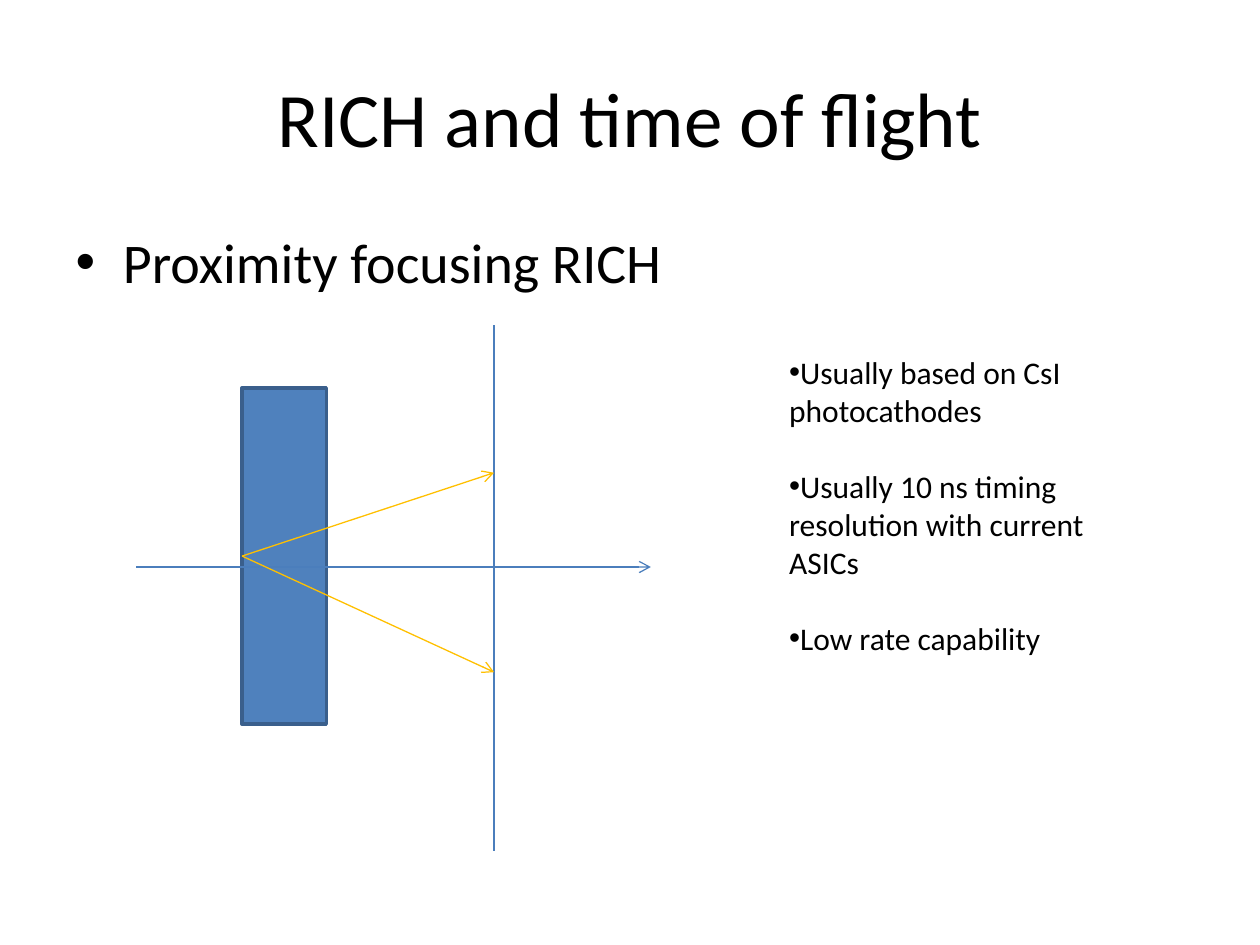
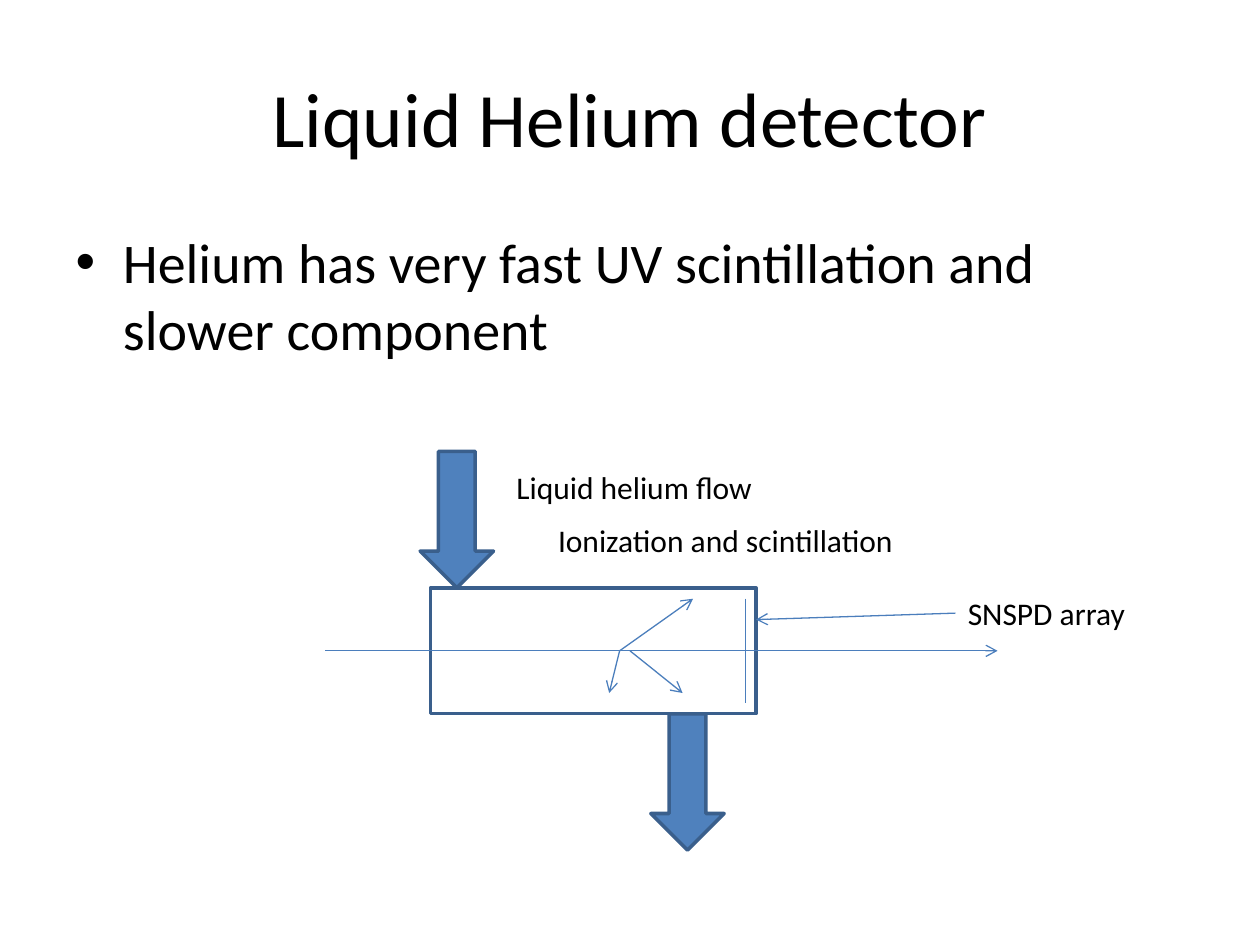
from dataclasses import dataclass

from pptx import Presentation
from pptx.dml.color import RGBColor
from pptx.enum.shapes import MSO_CONNECTOR, MSO_SHAPE
from pptx.enum.text import MSO_AUTO_SIZE, PP_ALIGN
from pptx.oxml.ns import qn
from pptx.util import Cm, Pt
from lxml.etree import SubElement


@dataclass(frozen=True)
class Theme:
    font: str = "Calibri"
    text: RGBColor = RGBColor(0x00, 0x00, 0x00)
    fill: RGBColor = RGBColor(0x4F, 0x81, 0xBD)
    outline: RGBColor = RGBColor(0x3A, 0x5F, 0x8C)
    line: RGBColor = RGBColor(0x4B, 0x7E, 0xBC)
    photon: RGBColor = RGBColor(0xFF, 0xC0, 0x00)
    title_size: Pt = Pt(44)
    body_size: Pt = Pt(32)
    label_size: Pt = Pt(18)
    note_gap: Pt = Pt(22)
    outline_width: Pt = Pt(2)
    line_width: Pt = Pt(0.75)


THEME = Theme()
LEFT_SIDE = 1


def format_runs(tf, size):
    for p in tf.paragraphs:
        for r in p.runs:
            r.font.name = THEME.font
            r.font.size = size
            r.font.color.rgb = THEME.text


def place(sp, left, top, width, height):
    sp.left, sp.top, sp.width, sp.height = Cm(left), Cm(top), Cm(width), Cm(height)


def add_content_slide(prs, title, bullet):
    slide = prs.slides.add_slide(prs.slide_layouts[1])
    title_sp, body_sp = slide.placeholders
    place(title_sp, 1.27, 0.76, 22.86, 3.18)
    place(body_sp, 1.27, 4.45, 22.86, 12.57)
    title_sp.text_frame.text = title
    title_sp.text_frame.paragraphs[0].alignment = PP_ALIGN.CENTER
    body_sp.text_frame.text = bullet
    format_runs(title_sp.text_frame, THEME.title_size)
    format_runs(body_sp.text_frame, THEME.body_size)
    return slide


def add_block(slide, kind, left, top, width, height, filled=True):
    sp = slide.shapes.add_shape(kind, Cm(left), Cm(top), Cm(width), Cm(height))
    sp.shadow.inherit = False
    if filled:
        sp.fill.solid()
        sp.fill.fore_color.rgb = THEME.fill
    else:
        sp.fill.background()
    sp.line.color.rgb = THEME.outline
    sp.line.width = THEME.outline_width
    return sp


def add_line(slide, start, end, color=THEME.line, arrow=True):
    """Draw a thin line between two (x, y) points in cm."""
    line = slide.shapes.add_connector(
        MSO_CONNECTOR.STRAIGHT, *(Cm(v) for v in (*start, *end)))
    line.line.color.rgb = color
    line.line.width = THEME.line_width
    sp_pr = line._element.spPr
    if arrow:
        SubElement(sp_pr.find(qn("a:ln")), qn("a:tailEnd"), type="arrow")
    SubElement(sp_pr, qn("a:effectLst"))
    return line


def add_text(slide, text, left, top, width, height=1.02, wrap=False):
    sp = slide.shapes.add_textbox(Cm(left), Cm(top), Cm(width), Cm(height))
    tf = sp.text_frame
    tf.word_wrap = wrap
    tf.auto_size = MSO_AUTO_SIZE.SHAPE_TO_FIT_TEXT
    tf.text = text
    format_runs(tf, THEME.label_size)
    return sp


def add_notes_list(slide, notes, left, top, width, height):
    """Bulleted remarks, set apart by one line and without a hanging indent."""
    sp = add_text(slide, "\n".join(notes), left, top, width, height, wrap=True)
    for i, p in enumerate(sp.text_frame.paragraphs):
        if i:
            p.space_before = THEME.note_gap
        p_pr = p._p.get_or_add_pPr()
        SubElement(p_pr, qn("a:buFont"), typeface="Arial")
        SubElement(p_pr, qn("a:buChar"), char="•")


def build_rich(prs):
    slide = add_content_slide(prs, "RICH and time of flight", "Proximity focusing RICH")
    screen_x, beam_y = 9.96, 11.43
    radiator = add_block(slide, MSO_SHAPE.RECTANGLE, 4.88, 7.82, 1.7, 6.78)
    add_line(slide, (screen_x, 6.56), (screen_x, 17.15), arrow=False)
    add_line(slide, (2.75, beam_y), (13.12, beam_y))
    add_notes_list(slide, [
        "Usually based on CsI photocathodes",
        "Usually 10 ns timing resolution with current ASICs",
        "Low rate capability",
    ], 15.66, 6.99, 7.62, 7.94)
    for hit_y in (9.53, 13.55):
        photon = add_line(slide, (4.88, 11.21), (screen_x, hit_y), THEME.photon)
        photon.begin_connect(radiator, LEFT_SIDE)


def build_helium(prs):
    slide = add_content_slide(
        prs, "Liquid Helium detector",
        "Helium has very fast UV scintillation and slower component")
    array_x, beam_y = 15.03, 13.12
    add_block(slide, MSO_SHAPE.RECTANGLE, 8.68, 11.85, 6.56, 2.54, filled=False)
    add_line(slide, (array_x, 12.07), (array_x, 14.18), arrow=False)
    add_line(slide, (6.56, beam_y), (20.11, beam_y))
    for flow_x, flow_y in ((8.47, 9.1), (13.12, 14.39)):
        add_block(slide, MSO_SHAPE.DOWN_ARROW, flow_x, flow_y, 1.48, 2.75)
    for origin_x, tip in ((12.49, (13.97, 12.07)), (12.7, (13.76, 13.97)),
                          (12.49, (12.28, 13.97))):
        add_line(slide, (origin_x, beam_y), tip)
    add_text(slide, "Ionization and scintillation", 11, 10.37, 7.34)
    add_text(slide, "Liquid helium flow", 10.16, 9.31, 5.33)
    array_label = add_text(slide, "SNSPD array", 19.26, 11.85, 3.71)
    pointer = add_line(slide, (19.26, 12.36), (15.24, 12.49))
    pointer.begin_connect(array_label, LEFT_SIDE)


def main():
    prs = Presentation()
    prs.slide_width, prs.slide_height = Cm(25.4), Cm(19.05)
    build_rich(prs)
    build_helium(prs)
    prs.save("out.pptx")


if __name__ == "__main__":
    main()
